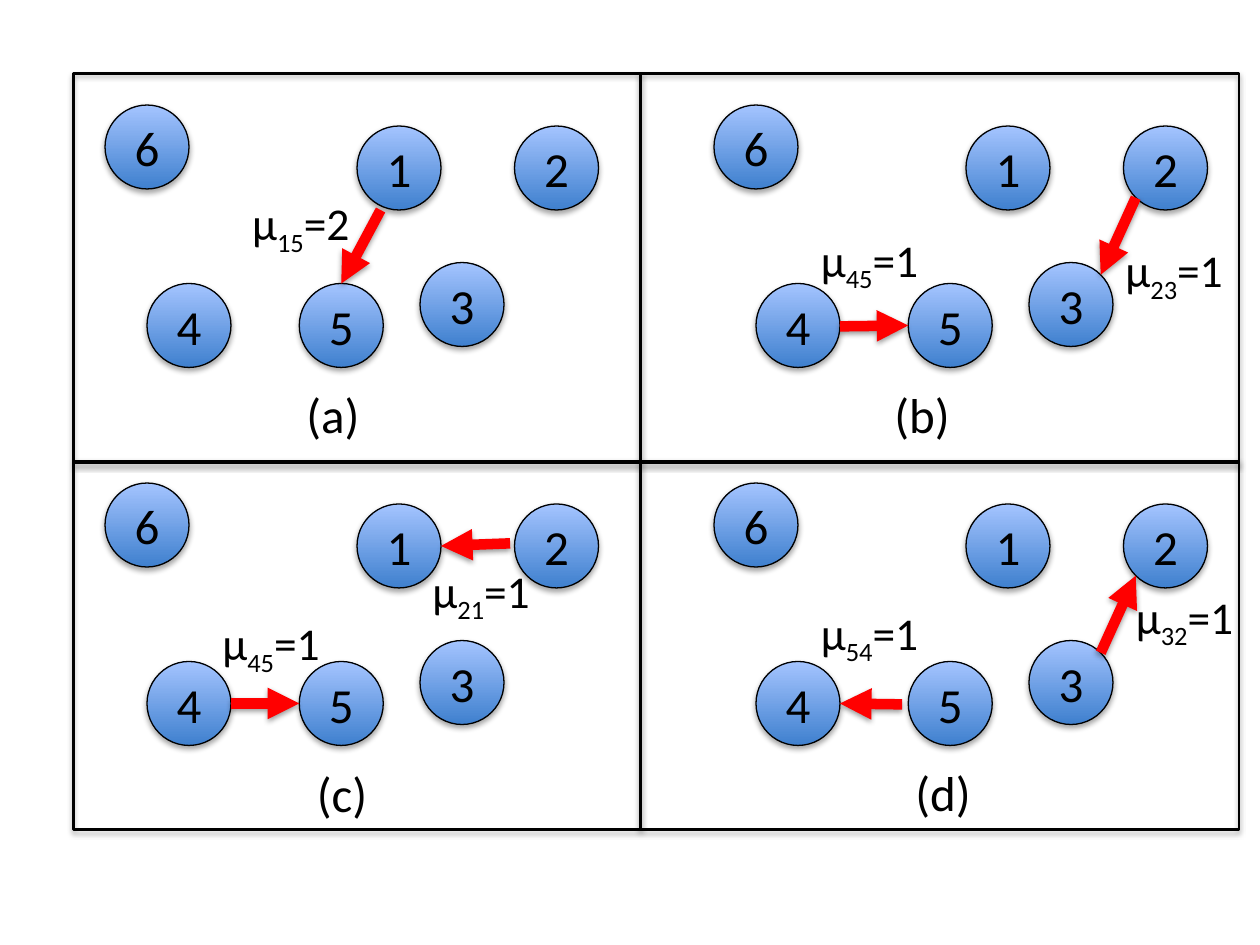
from dataclasses import dataclass

from lxml import etree
from pptx import Presentation
from pptx.dml.color import RGBColor
from pptx.enum.shapes import MSO_CONNECTOR, MSO_SHAPE
from pptx.enum.text import MSO_ANCHOR, MSO_AUTO_SIZE, PP_ALIGN
from pptx.oxml.ns import qn
from pptx.util import Pt

OVAL, RECT = MSO_SHAPE.OVAL, MSO_SHAPE.RECTANGLE
STRAIGHT = MSO_CONNECTOR.STRAIGHT
MIDDLE, CENTER = MSO_ANCHOR.MIDDLE, PP_ALIGN.CENTER
FIT_TEXT = MSO_AUTO_SIZE.SHAPE_TO_FIT_TEXT


@dataclass(frozen=True)
class Theme:
    """Colours, font and type sizes of the slide."""

    ink: RGBColor = RGBColor(0, 0, 0)
    arrow: RGBColor = RGBColor(0xFF, 0, 0)
    node_low: RGBColor = RGBColor(0x3F, 0x80, 0xCE)
    node_high: RGBColor = RGBColor(0xA4, 0xC4, 0xFF)
    font: str = "Calibri"
    text_size: int = 28
    label_size: int = 26


THEME = Theme()
NODE_SIZE = 48
NODES = {"1": (144, 12), "2": (234, 12), "3": (180, 90),
         "6": (0, 0), "4": (24, 102), "5": (111, 102)}
FRAME = (42, 42, 708, 474)
DIVIDER_X, DIVIDER_Y = 366, 264


@dataclass(frozen=True)
class Panel:
    """One network state: node origin, caption box, arrows and labels."""

    origin: tuple
    caption: str
    caption_at: tuple
    arrows: tuple
    labels: tuple


PANELS = (
    Panel((60, 60), "(a)", (168, 216, 45),
          ((217.5, 120, 195, 162),),
          (("15", "=2", 137, 108),)),
    Panel((408, 60), "(b)", (504, 216, 47),
          ((649, 113, 629, 157), (480, 186.5, 519, 186)),
          (("45", "=1", 462, 129), ("23", "=1", 636, 135))),
    Panel((60, 276), "(c)", (174, 432.5, 44),
          ((291.5, 310.5, 252, 312), (132, 402, 171, 402)),
          (("45", "=1", 120, 348), ("21", "=1", 240, 318))),
    Panel((408, 276), "(d)", (516, 432, 47),
          ((515.5, 402.5, 480, 402), (629, 373, 649, 329)),
          (("32", "=1", 642, 333), ("54", "=1", 462, 342))),
)


def add_shadow(shape, distance, opacity):
    """Give a shape or connector a soft shadow straight below it."""
    effects = etree.SubElement(shape._element.spPr, qn("a:effectLst"))
    shadow = etree.SubElement(effects, qn("a:outerShdw"), blurRad="40000",
                              dist=str(Pt(distance)), dir="5400000", rotWithShape="0")
    color = etree.SubElement(shadow, qn("a:srgbClr"), val=str(THEME.ink))
    etree.SubElement(color, qn("a:alpha"), val=str(opacity * 1000))


def style_runs(p, size):
    """Set the theme font and ink on every run of a paragraph."""
    for r in p.runs:
        r.font.name = THEME.font
        r.font.size = Pt(size)
        r.font.color.rgb = THEME.ink


def add_outlined(shapes, kind, left, top, width, height, weight):
    """Add a preset shape with a black outline and a shadow."""
    sp = shapes.add_shape(kind, Pt(left), Pt(top), Pt(width), Pt(height))
    sp.fill.background()
    sp.line.color.rgb = THEME.ink
    sp.line.width = Pt(weight)
    add_shadow(sp, 1.8, 35)
    return sp


def add_node(shapes, name, left, top):
    """Add a numbered circle with a vertical gradient."""
    sp = add_outlined(shapes, OVAL, left, top, NODE_SIZE, NODE_SIZE, 0.75)
    sp.fill.gradient()
    sp.fill.gradient_angle = 90
    for stop, color in zip(sp.fill.gradient_stops, (THEME.node_low, THEME.node_high)):
        stop.color.rgb = color
    tf = sp.text_frame
    tf.text = name
    tf.vertical_anchor = MIDDLE
    p = tf.paragraphs[0]
    p.alignment = CENTER
    style_runs(p, THEME.text_size)


def add_network(s, origin):
    """Add the six nodes of a panel as one group."""
    group = s.shapes.add_group_shape()
    for name, (dx, dy) in NODES.items():
        add_node(group.shapes, name, origin[0] + dx, origin[1] + dy)


def add_line(s, ends, color, weight, arrow=False):
    """Add a straight line, with an arrowhead at its end if asked."""
    line = s.shapes.add_connector(STRAIGHT, *(Pt(v) for v in ends))
    line.line.color.rgb = color
    line.line.width = Pt(weight)
    if arrow:
        ln = line.line._get_or_add_ln()
        etree.SubElement(ln, qn("a:tailEnd"), type="triangle")
    add_shadow(line, 1.6, 38)


def add_grid(s):
    """Add the outer frame and the two dividers between panels."""
    left, top, right, bottom = FRAME
    add_outlined(s.shapes, RECT, left, top, right - left, bottom - top, 1.5)
    add_line(s, (DIVIDER_X, top, DIVIDER_X, bottom), THEME.ink, 2)
    add_line(s, (right, DIVIDER_Y, left, DIVIDER_Y), THEME.ink, 2)


def add_text(s, left, top, width, height):
    """Add an unwrapped text box and return its first paragraph."""
    tf = s.shapes.add_textbox(Pt(left), Pt(top), Pt(width), Pt(height)).text_frame
    tf.word_wrap = False
    tf.auto_size = FIT_TEXT
    return tf.paragraphs[0]


def add_caption(s, text, left, top, width):
    """Add the letter below a panel's network."""
    p = add_text(s, left, top, width, 41)
    p.text = text
    style_runs(p, THEME.text_size)


def add_label(s, index, value, left, top):
    """Add a μ label with a subscript index."""
    p = add_text(s, left, top, 73.5, 39)
    for text in ("μ", index, value):
        p.add_run().text = text
    style_runs(p, THEME.label_size)
    p.runs[1]._r.get_or_add_rPr().set("baseline", "-25000")


def main():
    """Build the four-panel slide and save it."""
    prs = Presentation()
    prs.slide_width, prs.slide_height = Pt(720), Pt(540)
    s = prs.slides.add_slide(prs.slide_layouts[6])
    for panel in PANELS:
        add_network(s, panel.origin)
    add_grid(s)
    for panel in PANELS:
        add_caption(s, panel.caption, *panel.caption_at)
        for ends in panel.arrows:
            add_line(s, ends, THEME.arrow, 6, arrow=True)
        for label in panel.labels:
            add_label(s, *label)
    prs.save("out.pptx")


if __name__ == "__main__":
    main()
